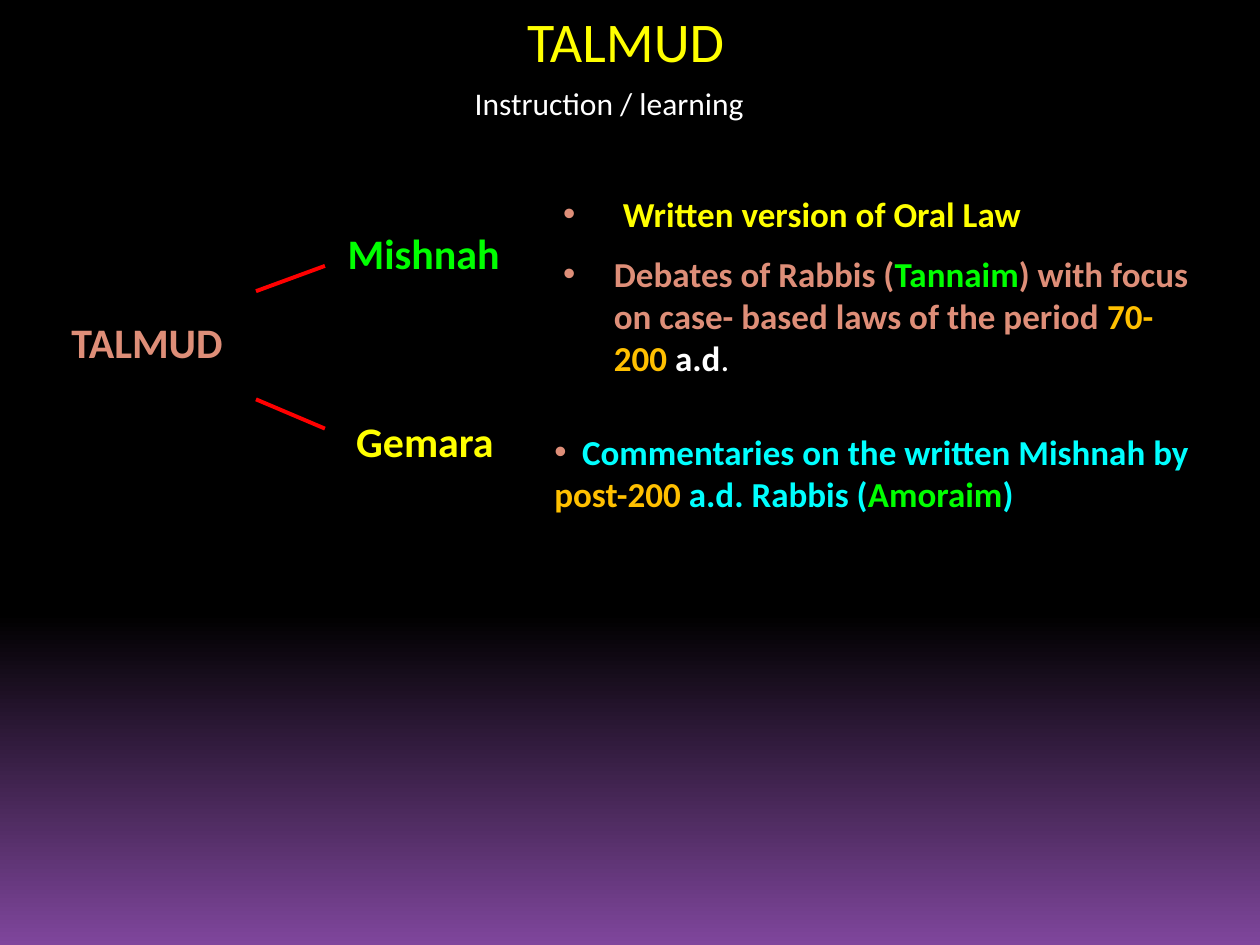
import copy
import pptx
import pptx.util
import pptx.dml.color
import pptx.enum.shapes
import pptx.enum.text
import pptx.oxml
import pptx.oxml.ns

Cm, Pt = pptx.util.Cm, pptx.util.Pt
RGB = pptx.dml.color.RGBColor
qn = pptx.oxml.ns.qn

BLACK = RGB(0x00, 0x00, 0x00)
WHITE = RGB(0xFF, 0xFF, 0xFF)
PURPLE = RGB(0x7F, 0x46, 0x9C)
YELLOW = RGB(0xFF, 0xFF, 0x00)
GREEN = RGB(0x00, 0xFF, 0x00)
CYAN = RGB(0x00, 0xFF, 0xFF)
AMBER = RGB(0xFF, 0xC0, 0x00)
CORAL = RGB(0xDE, 0x8E, 0x78)
RED = RGB(0xFF, 0x00, 0x00)

# Content: boxes are left, top, width, height in cm
FONT = "Calibri"
SHADES = [(0, BLACK), (0.65, BLACK), (1, PURPLE)]
TITLE = ("TALMUD", (8.74, 0, 7.75, 1.63))
LABELS = [
    ("Instruction / learning", 18, WHITE, False, (9.32, 1.57, 6.35, 1.02)),
    ("TALMUD", 24, CORAL, True, (1.19, 6.25, 6.15, 1.27)),
    ("Mishnah", 24, GREEN, True, (6.76, 4.47, 4.95, 1.27)),
    ("Gemara", 24, YELLOW, True, (6.93, 8.26, 4.78, 1.27)),
]
FORK = (5.16, 6.55)  # left and right ends of both branches
BRANCHES = [(5.87, 5.36), (8.05, 8.64)]

# Each point: text indent, hanging or not, then runs of text, colour, bold
MISHNAH = [
    (1.2, True, [("Written version of Oral Law", YELLOW, True)]),
    (1.02, True, [
        ("Debates of Rabbis (", CORAL, True),
        ("Tannaim", GREEN, True),
        (") with focus on case- based laws of the period ", CORAL, True),
        ("70-200 ", AMBER, True),
        ("a.d", WHITE, True),
        (".", WHITE, False),
    ]),
]
GEMARA = [
    (0.56, False, [
        ("\tCommentaries on the written Mishnah by ", CYAN, True),
        ("post-200 ", AMBER, True),
        ("a.d. Rabbis (", CYAN, True),
        ("Amoraim", GREEN, True),
        (")", CYAN, True),
    ]),
]
LISTS = [
    (MISHNAH, (11.1, 3.76, 13.28, 4.01)),
    (GEMARA, (10.92, 8.56, 14.48, 1.96)),
]


def place(shape, box):
    shape.left, shape.top, shape.width, shape.height = map(Cm, box)
    frame = shape.text_frame
    frame.word_wrap = True
    frame.auto_size = pptx.enum.text.MSO_AUTO_SIZE.NONE
    return frame


def style(run, size, color, bold):
    font = run.font
    font.name, font.size, font.bold = FONT, Pt(size), bold
    font.color.rgb = color


def bullet(para, indent, hang):
    """Hang the text, or let later lines run back under the bullet."""
    props = para._p.get_or_add_pPr()
    step = Cm(indent)
    props.set("marL", str(step if hang else 0))
    props.set("indent", str(-step if hang else 0))
    ns = pptx.oxml.ns.nsdecls("a")
    marks = [
        f'<a:buClr {ns}><a:srgbClr val="{CORAL}"/></a:buClr>',
        f'<a:buFont {ns} typeface="Arial"/>',
        f'<a:buChar {ns} char="•"/>',
    ]
    if not hang:
        marks.append(f'<a:tabLst {ns}><a:tab pos="{step}" algn="l"/></a:tabLst>')
    for mark in marks:
        props.append(pptx.oxml.parse_xml(mark))


def fill_list(frame, points):
    frame.vertical_anchor = pptx.enum.text.MSO_ANCHOR.TOP
    for i, (indent, hang, runs) in enumerate(points):
        para = frame.add_paragraph() if i else frame.paragraphs[0]
        para.space_before = Pt(10 if i else 0)
        bullet(para, indent, hang)
        for text, color, bold in runs:
            run = para.add_run()
            run.text = text
            style(run, 20, color, bold)


def paint(slide):
    fill = slide.background.fill
    fill.gradient()
    fill.gradient_angle = 270
    stops = slide.element.find(".//" + qn("a:gsLst"))
    stops.insert(1, copy.deepcopy(stops[0]))
    for stop, (pos, color) in zip(fill.gradient_stops, SHADES):
        stop.position = pos
        stop.color.rgb = color


def main():
    deck = pptx.Presentation()
    deck.slide_width, deck.slide_height = Cm(25.4), Cm(19.05)
    slide = deck.slides.add_slide(deck.slide_layouts[3])
    paint(slide)

    # Title
    text, box = TITLE
    frame = place(slide.shapes.title, box)
    frame.text = text
    style(frame.paragraphs[0].runs[0], 32, YELLOW, False)

    # Labels
    for text, size, color, bold, box in LABELS:
        frame = place(slide.shapes.add_textbox(0, 0, 0, 0), box)
        frame.text = text
        style(frame.paragraphs[0].runs[0], size, color, bold)

    # Branches
    for start, end in BRANCHES:
        line = slide.shapes.add_connector(
            pptx.enum.shapes.MSO_CONNECTOR.STRAIGHT,
            Cm(FORK[0]), Cm(start), Cm(FORK[1]), Cm(end))
        line.line.color.rgb = RED
        line.line.width = Pt(2.25)
        props = line._element.spPr
        props.append(props.makeelement(qn("a:effectLst"), {}))

    # Bulleted lists
    for idx, (points, box) in enumerate(LISTS, 1):
        fill_list(place(slide.placeholders[idx], box), points)

    deck.save("out.pptx")


if __name__ == "__main__":
    main()
